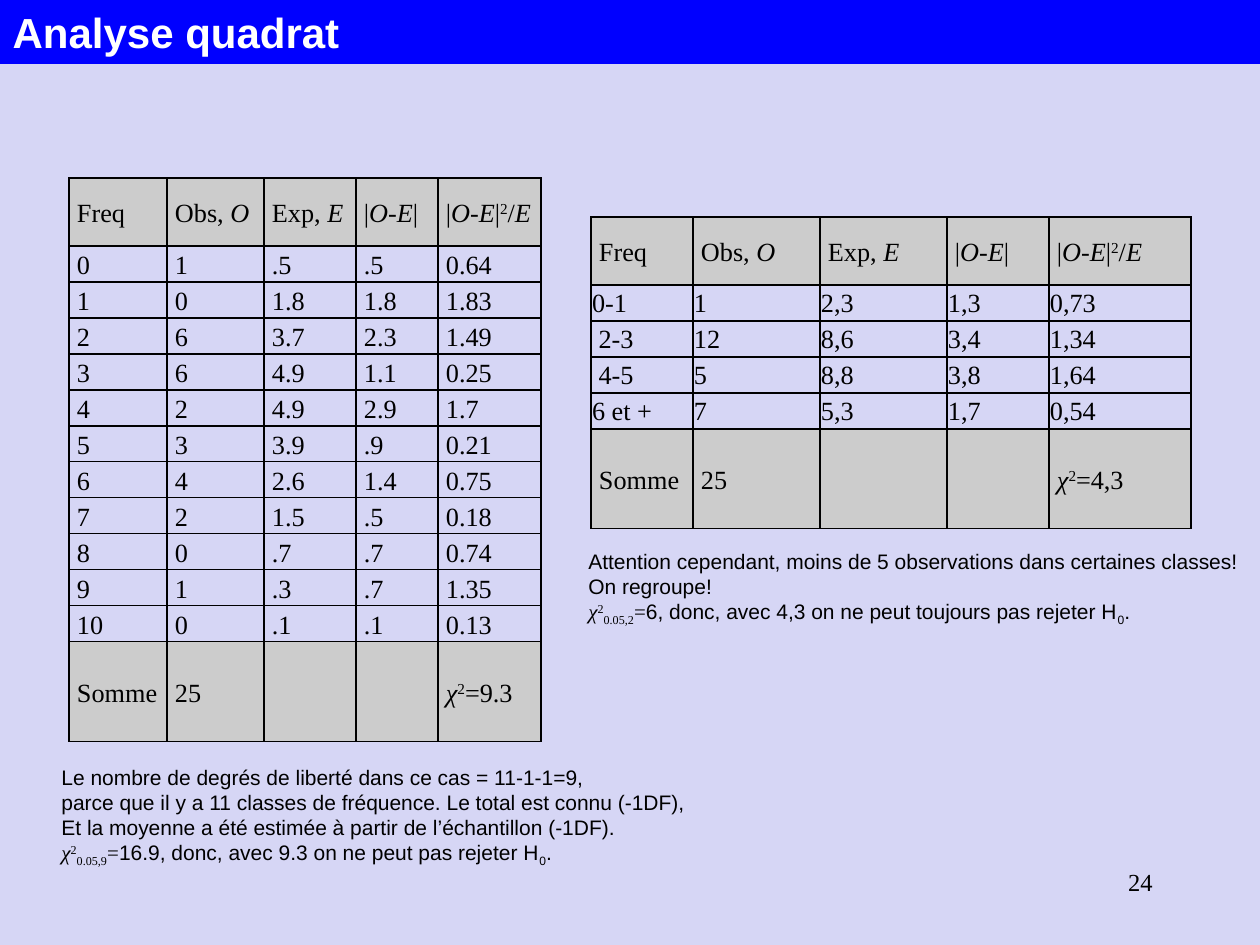
import itertools

import lxml.etree
import pptx
import pptx.dml.color
import pptx.enum.text
import pptx.oxml.ns
import pptx.util

SCALE = 914400 / 126
SERIF, SANS = "Times New Roman", "Arial"
ANCHOR = pptx.enum.text.MSO_ANCHOR
ALIGN = pptx.enum.text.PP_ALIGN
FIT = pptx.enum.text.MSO_AUTO_SIZE
HEAD = ["Freq", "Obs, _O_", "Exp, _E_", "|_O_-_E_|", "|_O_‑_E_|^2^/_E_"]
WIDE, TIGHT = (8, 4, 8, 0), (1, 1, 1, 0)

FULL = [
    ["0", "1", ".5", ".5", "0.64"],
    ["1", "0", "1.8", "1.8", "1.83"],
    ["2", "6", "3.7", "2.3", "1.49"],
    ["3", "6", "4.9", "1.1", "0.25"],
    ["4", "2", "4.9", "2.9", "1.7"],
    ["5", "3", "3.9", ".9", "0.21"],
    ["6", "4", "2.6", "1.4", "0.75"],
    ["7", "2", "1.5", ".5", "0.18"],
    ["8", "0", ".7", ".7", "0.74"],
    ["9", "1", ".3", ".7", "1.35"],
    ["10", "0", ".1", ".1", "0.13"],
]
MERGED = [
    ["0-1", "1", "2,3", "1,3", "0,73"],
    [" 2-3", "12", "8,6", "3,4", "1,34"],
    [" 4-5", "5", "8,8", "3,8", "1,64"],
    ["6 et +", "7", "5,3", "1,7", "0,54"],
]
DEGREES = [
    "Le nombre de degrés de liberté dans ce cas = 11‑1‑1=9,",
    "parce que il y a 11 classes de fréquence. Le total est connu (‑1DF),",
    "Et la moyenne a été estimée à partir de l’échantillon (‑1DF).",
    "@_χ_^2^~0.05,9~=@16.9, donc, avec 9.3 on ne peut pas rejeter H~0~.",
]
CAUTION = [
    "Attention cependant, moins de 5 observations dans certaines classes!",
    "On regroupe!",
    "@_χ_^2^~0.05,2~=@6, donc, avec 4,3 on ne peut toujours pas rejeter H~0~.",
]


def px(count):
    """Turn px into EMU."""
    return pptx.util.Emu(round(count * SCALE))


def paint(hue):
    """Turn a hex string into a colour."""
    return pptx.dml.color.RGBColor.from_string(hue)


def parse(text):
    """Yield runs with their marks: _ italic, ^ raised, ~ lowered, @ serif."""
    marks, chars = set(), []
    for char in text:
        if char in "_^~@":
            marks ^= {char}
        else:
            chars.append((frozenset(marks), char))
    for key, group in itertools.groupby(chars, lambda pair: pair[0]):
        yield key, "".join(char for _, char in group)


def write(frame, text, size=15, font=SERIF, hue="000000", bold=False,
          align=ALIGN.LEFT):
    """Write marked-up lines into a text frame."""
    for spot, line in enumerate(text.split("\n")):
        para = frame.add_paragraph() if spot else frame.paragraphs[0]
        para.alignment = align
        for marks, part in parse(line):
            run = para.add_run()
            run.text = part
            run.font.size = pptx.util.Pt(size)
            run.font.name = SERIF if "@" in marks else font
            run.font.color.rgb = paint(hue)
            run.font.bold = bold
            run.font.italic = "_" in marks
            if marks & {"^", "~"}:
                shift = "30000" if "^" in marks else "-25000"
                run._r.get_or_add_rPr().set("baseline", shift)


def edge(cell):
    """Draw thin black borders around a cell."""
    name = pptx.oxml.ns.qn
    props = cell._tc.get_or_add_tcPr()
    for side in ("lnL", "lnR", "lnT", "lnB"):
        line = lxml.etree.SubElement(props, name(f"a:{side}"), w="12700")
        fill = lxml.etree.SubElement(line, name("a:solidFill"))
        lxml.etree.SubElement(fill, name("a:srgbClr"), val="000000")


def banner(slide, box, text):
    """Set the title as a blue band."""
    title = slide.shapes.title
    title.left, title.top, title.width, title.height = map(px, box)
    title.fill.solid()
    title.fill.fore_color.rgb = paint("0000FF")
    frame = title.text_frame
    frame.auto_size = FIT.NONE
    frame.vertical_anchor = ANCHOR.MIDDLE
    write(frame, text, size=24, font=SANS, hue="FFFFFF", bold=True)


def grid(slide, left, top, cols, data, total, inset):
    """Place a frequency table with grey head and sum rows."""
    rows = [HEAD, *data, ["Somme", "25", "", "", total]]
    highs = [68] + [36] * len(data) + [100]
    box = map(px, (left, top, sum(cols), sum(highs)))
    table = slide.shapes.add_table(len(rows), len(cols), *box).table
    table.first_row = table.horz_banding = False
    for col, width in zip(table.columns, cols):
        col.width = px(width)
    for spot, (row, high) in enumerate(zip(rows, highs)):
        table.rows[spot].height = px(high)
        outer = spot in (0, len(rows) - 1)
        for cell, text in zip(table.rows[spot].cells, row):
            gaps = map(px, WIDE if outer else inset)
            (cell.margin_left, cell.margin_top,
             cell.margin_right, cell.margin_bottom) = gaps
            cell.vertical_anchor = ANCHOR.MIDDLE
            write(cell.text_frame, text)
            edge(cell)
            if outer:
                cell.fill.solid()
                cell.fill.fore_color.rgb = paint("CCCCCC")
            else:
                cell.fill.background()


def note(slide, box, text, wrap=False, **form):
    """Place a text box."""
    frame = slide.shapes.add_textbox(*map(px, box)).text_frame
    frame.word_wrap = wrap
    write(frame, text, **form)


def main():
    """Build and save the slide."""
    deck = pptx.Presentation()
    deck.slide_width, deck.slide_height = px(1260), px(945)
    slide = deck.slides.add_slide(deck.slide_layouts[5])
    slide.background.fill.solid()
    slide.background.fill.fore_color.rgb = paint("D6D6F5")
    banner(slide, (0, 0, 1260, 64), "Analyse quadrat")
    grid(slide, 69, 178, (98, 97, 92, 82, 103), FULL, "_χ_^2^=9.3", WIDE)
    grid(slide, 591, 217, (102, 127, 127, 102, 142), MERGED, "_χ_^2^=4,3", TIGHT)
    note(slide, (49, 758, 684, 115), "\n".join(DEGREES), size=12, font=SANS)
    note(slide, (576, 542, 680, 89), "\n".join(CAUTION), size=12, font=SANS)
    note(slide, (903, 861, 262, 63), "24", wrap=True, size=14, align=ALIGN.RIGHT)
    deck.save("out.pptx")


if __name__ == "__main__":
    main()
